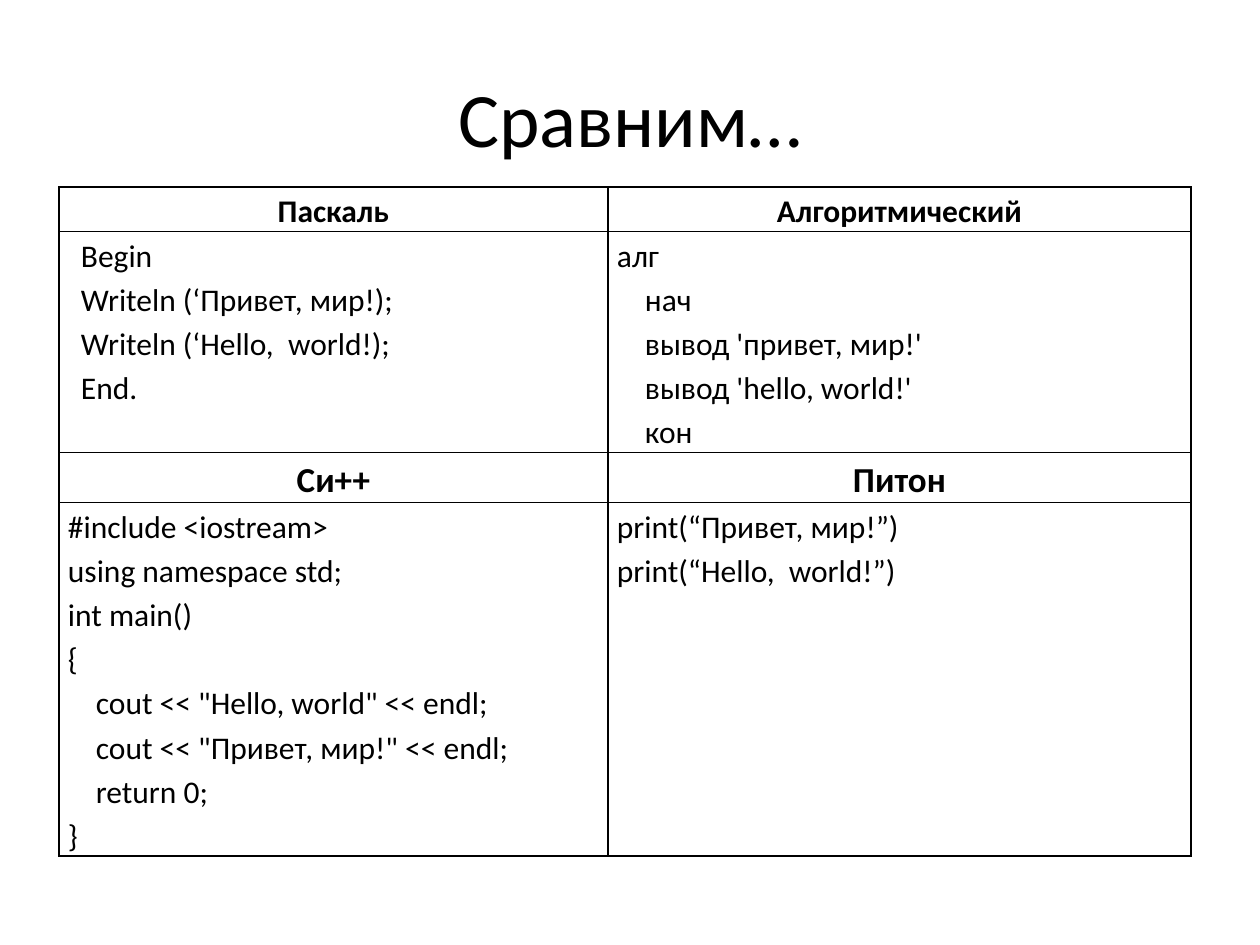
from pptx import Presentation
from pptx.dml.color import RGBColor
from pptx.enum.text import MSO_ANCHOR, PP_ALIGN
from pptx.oxml import parse_xml
from pptx.oxml.ns import nsdecls
from pptx.util import Emu, Pt

INK = "000000"
PASCAL = [(13, "Begin"), (13, "Writeln (‘Привет, мир!);"),
          (13, "Writeln (‘Hello,  world!);"), (13, "End.")]
ALGO = [(0, "алг"), (28, "нач"), (28, "вывод 'привет, мир!'"),
        (28, "вывод 'hello, world!'"), (28, "кон")]
CPP = [(0, "#include <iostream>"), (0, "using namespace std;"),
       (0, "int main()"), (0, "{"),
       (28, 'cout << "Hello, world" << endl;'),
       (28, 'cout << "Привет, мир!" << endl;'),
       (28, "return 0;"), (0, "}")]
PYTHON = [(0, "print(“Привет, мир!”)"), (0, "print(“Hello,  world!”)")]


def px(count):
    return Emu(round(count * 914400 / 126))


def paint(code):
    return RGBColor.from_string(code)


class Deck:
    def __init__(self, font, ink):
        self.font, self.ink = font, ink
        self.show = Presentation()
        self.show.slide_width, self.show.slide_height = px(1260), px(945)
        self.slide = self.show.slides.add_slide(self.show.slide_layouts[5])

    def words(self, para, text, size, bold=False):
        run = para.add_run()
        run.text = text
        run.font.name, run.font.size, run.font.bold = self.font, Pt(size), bold
        run.font.color.rgb = paint(self.ink)

    def title(self, text, x, y, wide, high):
        shape = self.slide.shapes.title
        shape.left, shape.top = px(x), px(y)
        shape.width, shape.height = px(wide), px(high)
        shape.text_frame.vertical_anchor = MSO_ANCHOR.MIDDLE
        para = shape.text_frame.paragraphs[0]
        para.alignment = PP_ALIGN.CENTER
        self.words(para, text, 44)

    def table(self, x, y, cols, rows):
        frame = self.slide.shapes.add_table(
            len(rows), len(cols), px(x), px(y), px(sum(cols)), px(sum(rows)))
        grid = frame.table
        grid.first_row = grid.horz_banding = False
        for col, wide in zip(grid.columns, cols):
            col.width = px(wide)
        for row, high in zip(grid.rows, rows):
            row.height = px(high)
        for cell in grid.iter_cells():
            cell.margin_left = cell.margin_right = px(9)
            cell.margin_top = cell.margin_bottom = 0
            cell.fill.background()
            self.border(cell)
        return grid

    def border(self, cell):
        props = cell._tc.get_or_add_tcPr()
        for spot, side in enumerate("LRTB"):
            props.insert(spot, parse_xml(
                f'<a:ln{side} {nsdecls("a")} w="{Pt(1)}"><a:solidFill>'
                f'<a:srgbClr val="{self.ink}"/></a:solidFill></a:ln{side}>'))

    def lines(self, cell, items):
        """Yield one paragraph and its text for each (indent, text) item."""
        frame = cell.text_frame
        for spot, (indent, text) in enumerate(items):
            para = frame.add_paragraph() if spot else frame.paragraphs[0]
            para.line_spacing = 1.15
            if indent:
                props = para._p.get_or_add_pPr()
                props.set("marL", "0")
                props.set("indent", str(px(indent)))
            yield para, text

    def head(self, cell, name, size):
        for para, text in self.lines(cell, [(0, name)]):
            para.alignment = PP_ALIGN.CENTER
            self.words(para, text, size, True)

    def code(self, cell, items):
        for para, text in self.lines(cell, items):
            self.words(para, text, 18)


def main():
    deck = Deck("Calibri", INK)
    deck.title("Сравним…", 63, 38, 1134, 158)
    grid = deck.table(59, 187, [549, 583], [44, 218, 50, 349])
    pairs = [(18, [("Паскаль", PASCAL), ("Алгоритмический", ALGO)]),
             (20, [("Си++", CPP), ("Питон", PYTHON)])]
    for band, (size, pair) in enumerate(pairs):
        for col, (name, items) in enumerate(pair):
            deck.head(grid.cell(2 * band, col), name, size)
            deck.code(grid.cell(2 * band + 1, col), items)
    deck.show.save("out.pptx")


if __name__ == "__main__":
    main()
